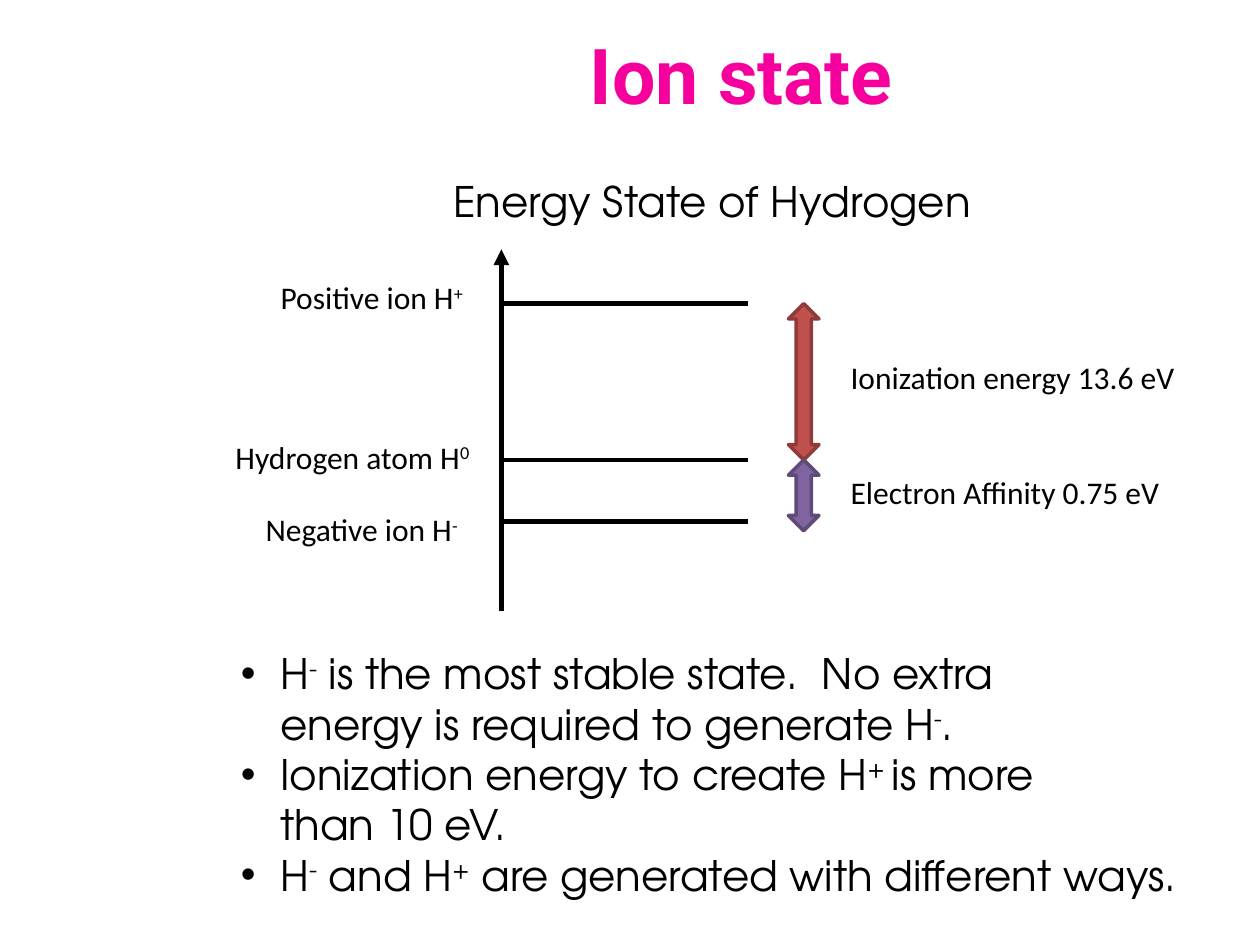
"""Build the hydrogen ion state slide with its energy level diagram."""
from dataclasses import dataclass

from lxml import etree
from pptx import Presentation
from pptx.dml.color import RGBColor
from pptx.enum import shapes, text
from pptx.oxml import ns
from pptx.util import Pt


@dataclass(frozen=True)
class Theme:
    ink: str = "000000"
    title: str = "F5009D"
    ionization: tuple = ("C0504D", "8E3B39")
    affinity: tuple = ("8064A2", "5F4A78")
    title_font: str = "Roboto"
    text_font: str = "TeX Gyre Adventor"
    label_font: str = "Calibri"
    title_size: int = 44
    text_size: int = 24
    label_size: int = 18


theme = Theme()


def write(para, content, font, size, color=theme.ink, bold=False):
    """Add runs to a paragraph, raising the parts between carets."""
    for index, part in enumerate(content.split("^")):
        for row, piece in enumerate(part.split("\n")):
            if row:
                para.add_line_break()
            span = para.add_run()
            span.text = piece
            span.font.name = font
            span.font.size = Pt(size)
            span.font.bold = bold
            span.font.color.rgb = RGBColor.from_string(color)
            if index % 2:
                span._r.get_or_add_rPr().set("baseline", "30000")


def draw_line(start, end, width):
    """Draw a plain straight line between two points."""
    line = page.shapes.add_connector(
        shapes.MSO_CONNECTOR.STRAIGHT, *map(Pt, start + end))
    line.line.color.rgb = RGBColor.from_string(theme.ink)
    line.line.width = Pt(width)
    etree.SubElement(line._element.spPr, ns.qn("a:effectLst"))
    return line


deck = Presentation()
deck.slide_width, deck.slide_height = Pt(720), Pt(540)
page = deck.slides.add_slide(deck.slide_layouts[1])

title = page.shapes.title
title.left, title.top, title.width, title.height = map(Pt, (127.5, 0, 592.5, 84))
title.text_frame.vertical_anchor = text.MSO_ANCHOR.MIDDLE
heading = title.text_frame.paragraphs[0]
heading.alignment = text.PP_ALIGN.CENTER
write(heading, "Ion state", theme.title_font, theme.title_size, theme.title, True)

axis_x, level_end = 286.5, 427.5
positive_y, atom_y, negative_y = 173.5, 262.8, 298
axis = draw_line((axis_x, 349), (axis_x, 142.5), 3)
etree.SubElement(axis.line._get_or_add_ln(), ns.qn("a:tailEnd"), type="triangle")
for level_y in (positive_y, atom_y, negative_y):
    draw_line((axis_x, level_y), (level_end, level_y), 2.5)

for top, height, (fill, edge) in (
    (positive_y, atom_y - positive_y, theme.ionization),
    (atom_y, 40.5, theme.affinity),
):
    arrow = page.shapes.add_shape(
        shapes.MSO_SHAPE.UP_DOWN_ARROW, Pt(450.5), Pt(top), Pt(17.5), Pt(height))
    arrow.shadow.inherit = False
    arrow.fill.solid()
    arrow.fill.fore_color.rgb = RGBColor.from_string(fill)
    arrow.line.color.rgb = RGBColor.from_string(edge)
    arrow.line.width = Pt(2)

caption_style = (329, 36, theme.text_font, theme.text_size)
label_style = (266.5, 29, theme.label_font, theme.label_size)
for left, top, content, (width, height, font, size) in (
    (252, 96.5, "Energy State of Hydrogen", caption_style),
    (153.3, 155.5, "Positive ion H^+^", label_style),
    (127.5, 246.5, "Hydrogen atom H^0^", label_style),
    (144.7, 288, "Negative ion H^-^", label_style),
    (479, 201, "Ionization energy 13.6 eV", label_style),
    (479, 267, "Electron Affinity 0.75 eV", label_style),
):
    box = page.shapes.add_textbox(Pt(left), Pt(top), Pt(width), Pt(height))
    box.text_frame.word_wrap = True
    box.text_frame.auto_size = text.MSO_AUTO_SIZE.SHAPE_TO_FIT_TEXT
    write(box.text_frame.paragraphs[0], content, font, size)

body = page.placeholders[1]
body.left, body.top, body.width, body.height = map(Pt, (130.5, 366.5, 581, 152.5))
frame = body.text_frame
frame.auto_size = text.MSO_AUTO_SIZE.NONE
frame.vertical_anchor = text.MSO_ANCHOR.TOP
for index, content in enumerate((
    "H^-^ is the most stable state.  No extra\nenergy is required to generate H^-^.",
    "Ionization energy to create H^+ ^is more\nthan 10 eV.",
    "H^-^ and H^+^ are generated with different ways.",
)):
    para = frame.add_paragraph() if index else frame.paragraphs[0]
    para.space_before = Pt(0)
    props = para._p.get_or_add_pPr()
    props.set("marL", str(Pt(22.5)))
    props.set("indent", str(-Pt(22.5)))
    etree.SubElement(props, ns.qn("a:buFont"), typeface="Arial")
    etree.SubElement(props, ns.qn("a:buChar"), char="•")
    write(para, content, theme.text_font, theme.text_size)

deck.save("out.pptx")
